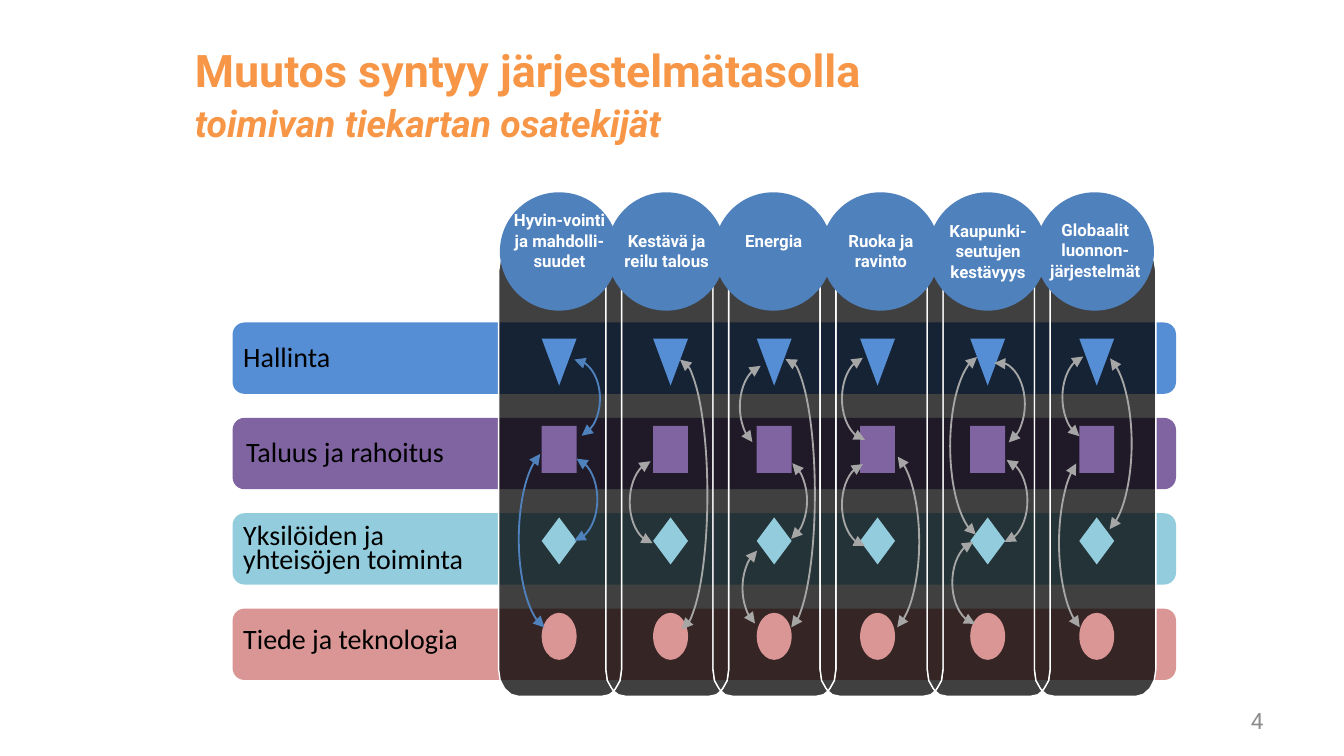
"""Build a slide of six system columns crossing four levers of change."""
from lxml import etree
from pptx import Presentation
from pptx.dml.color import RGBColor
from pptx.enum.shapes import MSO_SHAPE
from pptx.enum.text import MSO_ANCHOR, PP_ALIGN
from pptx.oxml.ns import qn
from pptx.util import Pt

BAR, ARC, OVAL = MSO_SHAPE.ROUNDED_RECTANGLE, MSO_SHAPE.ARC, MSO_SHAPE.OVAL
WEDGE, BOX, GEM = MSO_SHAPE.FLOWCHART_MERGE, MSO_SHAPE.RECTANGLE, MSO_SHAPE.DIAMOND
LEFT, MID, RIGHT = PP_ALIGN.LEFT, PP_ALIGN.CENTER, PP_ALIGN.RIGHT
TOP, CENTRE = MSO_ANCHOR.TOP, MSO_ANCHOR.MIDDLE

ORANGE = RGBColor(0xF7, 0x96, 0x46)
BLUE = RGBColor(0x4F, 0x81, 0xBD)
SKY = RGBColor(0x55, 0x8E, 0xD5)
PLUM = RGBColor(0x80, 0x64, 0xA2)
AQUA = RGBColor(0x93, 0xCD, 0xDD)
ROSE = RGBColor(0xD9, 0x96, 0x94)
GREY = RGBColor(0xA6, 0xA6, 0xA6)
DIM = RGBColor(0x8C, 0x8C, 0x8C)
BLACK = RGBColor(0, 0, 0)
WHITE = RGBColor(0xFF, 0xFF, 0xFF)

PITCH = 57.4
FIRST, SEAM, LAST = 267.1, 328.8, 619.2
ICON_X = (290.2, 349.9, 405.4, 460.8, 519.8, 578.2)

# Half edges run from the top down, as offset from the edge and height.
LENS = [(0, 133.9), (-1.1, 135.4), (-3.4, 139.5), (-4.2, 145.4)]
NOTCH = [(-6.7, 131), (-2.4, 131.9)] + LENS
CORNER = [(-10.8, 131), (-6.7, 132.1), (-3.2, 135.2), (-0.8, 139.9), (0, 145.4)]
FLOOR = 504.1

ROWS = [
    (SKY, WEDGE, 181.4, 130.3, 193, ["Hallinta"]),
    (PLUM, BOX, 228.2, 131.8, 244.1, ["Taluus ja rahoitus"]),
    (AQUA, GEM, 277.2, 130.3, 294.8, ["Yksilöiden ja", "yhteisöjen toiminta"]),
    (ROSE, OVAL, 328.3, 130.3, 344.2, ["Tiede ja teknologia"]),
]
THEMES = [
    (108.7, 68.4, ["Hyvin-vointi ja mahdolli-suudet"]),
    (119.7, 68.4, ["Kestävä ja reilu talous"]),
    (119.7, 68.4, ["Energia"]),
    (119.7, 68.4, ["Ruoka ja ravinto"]),
    (114.5, 68.4, ["Kaupunki-seutujen", "kestävyys"]),
    (113.8, 76.4, ["Globaalit", "luonnon-järjestelmät"]),
]
SHORT, LONG, TALL = (44.6, 28.1), (97.2, 35.3), (144.7, 30)
# Centre x, centre y, size, bulge side, start and end angle.
LINKS = [
    (295.6, 288.7, LONG, LEFT, 110.8, 211.4),
    (307.4, 213.5, (41.8, 28.1), RIGHT, 115.2, 215.51),
    (306, 267.5, SHORT, RIGHT, 110.74, 211.49),
    (351.4, 268.9, SHORT, LEFT, 110.74, 211.49),
    (364, 265, TALL, RIGHT, 108.61, 215.83),
    (410.4, 217.8, SHORT, LEFT, 120.64, 211.49),
    (411.8, 315, SHORT, LEFT, 120.64, 205.69),
    (418.3, 268.2, SHORT, RIGHT, 117.1, 205.74),
    (421.6, 264.6, TALL, RIGHT, 109.13, 0.35),
    (465.1, 213.5, SHORT, LEFT, 110.74, 211.49),
    (465.1, 270.4, SHORT, LEFT, 110.74, 211.49),
    (474.8, 290.2, LONG, RIGHT, 112.37, 211.4),
    (526.7, 239, LONG, LEFT, 110.8, 213.67),
    (524.2, 312.1, SHORT, LEFT, 110.74, 211.49),
    (536.4, 268.2, SHORT, RIGHT, 110.74, 211.49),
    (535, 216.4, SHORT, RIGHT, 116.83, 3.7),
    (588.6, 237.6, LONG, RIGHT, 112.37, 211.4),
    (583.2, 212.8, SHORT, LEFT, 115.9, 211.49),
    (585, 290.9, LONG, LEFT, 112.95, 209.25),
]


def write(frame, lines, size, font, color, align=LEFT, bold=False, space=None):
    """Fill a text frame with one paragraph per line."""
    frame.word_wrap = True
    frame.text = "\n".join(lines)
    for para in frame.paragraphs:
        para.alignment = align
        para.line_spacing = space
        para.font.size, para.font.name = Pt(size), font
        para.font.bold, para.font.color.rgb = bold, color


def add_text(slide, x, y, w, h, anchor=TOP, inset=None):
    """Add a text box and return its frame."""
    frame = slide.shapes.add_textbox(Pt(x), Pt(y), Pt(w), Pt(h)).text_frame
    frame.vertical_anchor = anchor
    if inset is not None:
        frame.margin_left = frame.margin_right = Pt(inset)
        frame.margin_top = frame.margin_bottom = Pt(inset)
    return frame


def add_form(slide, kind, x, y, w, h, color):
    """Add a plain filled preset shape."""
    form = slide.shapes.add_shape(kind, Pt(x), Pt(y), Pt(w), Pt(h))
    form.shadow.inherit = False
    form.fill.solid()
    form.fill.fore_color.rgb = color
    form.line.fill.background()


def edge(x, half, side):
    """Return a full edge at x, mirrored at mid height."""
    upper = [(x + side * dx, y) for dx, y in half]
    return upper + [(px, FLOOR - y) for px, y in reversed(upper)]


def add_pane(slide, left, right):
    """Add a see-through black pane between two edges."""
    (x, y), *rest = right + left[::-1]
    pen = slide.shapes.build_freeform(Pt(x), Pt(y))
    pen.add_line_segments([(Pt(px), Pt(py)) for px, py in rest])
    pane = pen.convert_to_shape()
    pane.shadow.inherit = False
    pane.fill.solid()
    pane.fill.fore_color.rgb = BLACK
    tint = pane.element.spPr.find(qn("a:solidFill"))[0]
    etree.SubElement(tint, qn("a:alpha"), val="75000")
    pane.line.color.rgb, pane.line.width = WHITE, Pt(0.75)


def add_link(slide, x, y, size, side, start, end, color):
    """Add a curved double arrow that bulges to one side."""
    w, h = size
    link = slide.shapes.add_shape(ARC, Pt(x - w / 2), Pt(y - h / 2), Pt(w), Pt(h))
    link.shadow.inherit = False
    link.adjustments[0], link.adjustments[1] = start, end
    link.rotation = 270 if side == LEFT else 90
    if side == RIGHT:
        link.element.spPr.find(qn("a:xfrm")).set("flipH", "1")
    link.fill.background()
    link.line.color.rgb, link.line.width = color, Pt(1)
    line = link.element.spPr.find(qn("a:ln"))
    for tip in ("a:headEnd", "a:tailEnd"):
        etree.SubElement(line, qn(tip), type="triangle")


def add_title(slide):
    """Place and format the two-line title."""
    title = slide.shapes.title
    title.left, title.top, title.width, title.height = Pt(97.2), Pt(22.3), Pt(538.6), Pt(62.6)
    frame = title.text_frame
    frame.vertical_anchor = TOP
    lines = ["Muutos syntyy järjestelmätasolla", "toimivan tiekartan osatekijät"]
    write(frame, lines, 24, "Roboto", ORANGE, bold=True, space=Pt(26))
    sub = frame.paragraphs[1].font
    sub.size, sub.italic = Pt(20), True


def main():
    """Build and save the slide."""
    deck = Presentation()
    deck.slide_width, deck.slide_height = Pt(720), Pt(405)
    slide = deck.slides.add_slide(deck.slide_layouts[5])
    add_title(slide)
    write(add_text(slide, 516.2, 375.1, 167.8, 21.6, CENTRE), ["4"], 12, "Roboto", DIM, RIGHT)

    for i, row in enumerate(ROWS):
        add_form(slide, BAR, 124.6, 172.8 + 51.1 * i, 505.4, 38.2, row[0])

    seams = [SEAM + PITCH * i for i in range(5)]
    lefts = [edge(FIRST, CORNER, -1)] + [edge(x, NOTCH, -1) for x in seams]
    rights = [edge(x, NOTCH, 1) for x in seams] + [edge(LAST, CORNER, 1)]
    for left, right in zip(lefts, rights):
        add_pane(slide, left, right)
    for color, kind, y, *_ in ROWS:
        for x in ICON_X:
            add_form(slide, kind, x, y, 18.7, 25.2, color)
    for x in seams:
        add_pane(slide, edge(x, LENS, 1), edge(x, LENS, -1))

    for *_, x, y, lines in ROWS:
        h = 12.8 * len(lines)
        frame = add_text(slide, x, y - h / 2, 137, h, CENTRE, 0)
        write(frame, lines, 15, "Calibri", BLACK, space=0.7)
    for i, link in enumerate(LINKS):
        add_link(slide, *link, BLUE if i < 3 else GREY)
    for i, (y, w, lines) in enumerate(THEMES):
        x = 267.8 + PITCH * i
        add_form(slide, OVAL, x, 103, 63.4, 63.4, BLUE)
        frame = add_text(slide, x + 31.9 - w / 2, y, w, 40)
        write(frame, lines, 9, "Roboto", WHITE, MID, True, Pt(11))
    deck.save("out.pptx")


if __name__ == "__main__":
    main()
